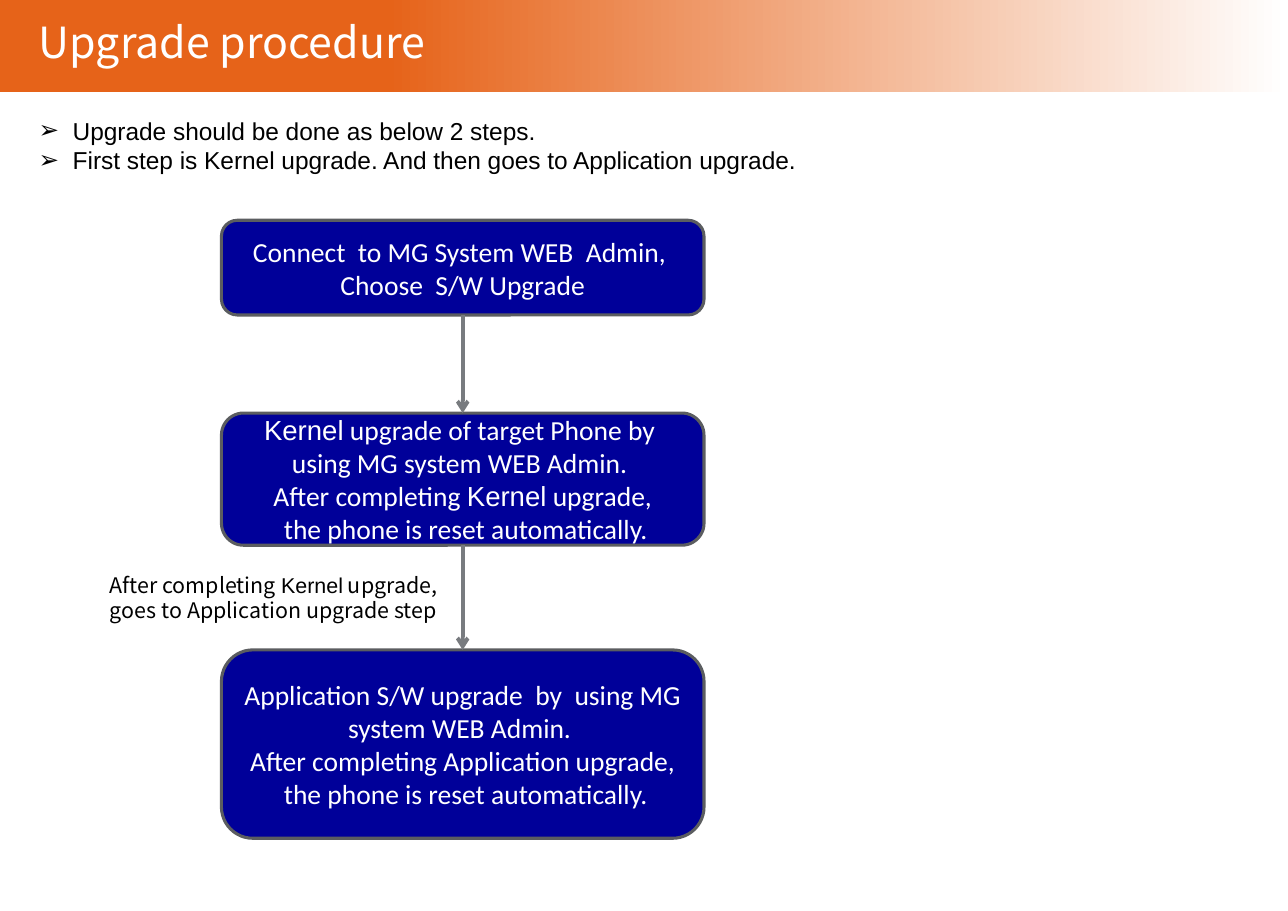
from dataclasses import dataclass

from lxml.etree import SubElement
from pptx import Presentation
from pptx.dml.color import RGBColor
from pptx.enum.shapes import MSO_CONNECTOR, MSO_SHAPE
from pptx.enum.text import MSO_ANCHOR, MSO_AUTO_SIZE, PP_ALIGN
from pptx.oxml.ns import qn
from pptx.util import Inches, Pt


@dataclass(frozen=True)
class Theme:
    banner: str = "E66319"
    light: str = "FFFFFF"
    dark: str = "000000"
    step: str = "000099"
    border: str = "5B5D60"
    arrow: str = "787B7F"
    heading_font: str = "Noto Sans CJK KR"
    step_font: str = "Calibri"
    body_font: str = "Arial"
    title_size: int = 28
    step_size: int = 18
    body_size: int = 16
    label_size: int = 14


class UpgradeSlide:
    """Holds the theme and the current page, and adds its elements."""

    def __init__(self, deck, theme):
        self.theme = theme
        self.width = deck.slide_width
        self.page = deck.slides.add_slide(deck.slide_layouts[1])
        self.shapes = self.page.shapes

    def place(self, box, left, top, width, height):
        box.left, box.top = Inches(left), Inches(top)
        box.width, box.height = Inches(width), Inches(height)

    def add_spans(self, para, text, font, size, color):
        """Add text run by run, with the word Kernel in the body font."""
        before, keyword, after = text.partition("Kernel")
        faces = (font, self.theme.body_font, font)
        for words, face in zip((before, keyword, after), faces):
            if words:
                span = para.add_run()
                span.text = words
                span.font.name = face
                span.font.size = Pt(size)
                span.font.color.rgb = RGBColor.from_string(color)

    def paragraphs(self, frame, lines):
        for number, line in enumerate(lines):
            yield (frame.add_paragraph() if number else frame.paragraphs[0]), line

    def banner(self, height):
        bar = self.shapes.add_shape(MSO_SHAPE.RECTANGLE, 0, 0, self.width, Inches(height))
        bar.shadow.inherit = False
        bar.line.fill.background()
        bar.fill.gradient()
        bar.fill.gradient_angle = 0
        stops = ((0.3, self.theme.banner), (1, self.theme.light))
        for stop, (position, color) in zip(bar.fill.gradient_stops, stops):
            stop.position = position
            stop.color.rgb = RGBColor.from_string(color)
        self.shapes._spTree.insert(2, bar._element)

    def title(self, text, *area):
        box = self.shapes.title
        self.place(box, *area)
        frame = box.text_frame
        frame.margin_left = frame.margin_right = frame.margin_top = frame.margin_bottom = 0
        frame.word_wrap = False
        frame.auto_size = MSO_AUTO_SIZE.NONE
        frame.vertical_anchor = MSO_ANCHOR.MIDDLE
        para = frame.paragraphs[0]
        para.alignment = PP_ALIGN.LEFT
        self.add_spans(para, text, self.theme.heading_font, self.theme.title_size, self.theme.light)

    def bullets(self, lines, *area):
        box = self.page.placeholders[1]
        self.place(box, *area)
        frame = box.text_frame
        frame.auto_size = MSO_AUTO_SIZE.NONE
        indent = Inches(0.31)
        for para, line in self.paragraphs(frame, lines):
            para.space_before = Pt(0)
            properties = para._p.get_or_add_pPr()
            properties.set("marL", str(indent))
            properties.set("indent", str(-indent))
            SubElement(properties, qn("a:buChar"), char="➢")
            self.add_spans(para, line, self.theme.body_font, self.theme.body_size, self.theme.dark)

    def step(self, lines, *area):
        box = self.shapes.add_shape(MSO_SHAPE.ROUNDED_RECTANGLE, *map(Inches, area))
        box.shadow.inherit = False
        box.fill.solid()
        box.fill.fore_color.rgb = RGBColor.from_string(self.theme.step)
        box.line.color.rgb = RGBColor.from_string(self.theme.border)
        box.line.width = Pt(2)
        frame = box.text_frame
        frame.word_wrap = True
        frame.vertical_anchor = MSO_ANCHOR.MIDDLE
        for para, line in self.paragraphs(frame, lines):
            para.alignment = PP_ALIGN.CENTER
            self.add_spans(para, line, self.theme.step_font, self.theme.step_size, self.theme.light)
        return box

    def arrow(self, upper, lower):
        link = self.shapes.add_connector(MSO_CONNECTOR.STRAIGHT, 0, 0, 0, 0)
        link.begin_connect(upper, 2)
        link.end_connect(lower, 0)
        link.line.color.rgb = RGBColor.from_string(self.theme.arrow)
        link.line.width = Pt(2.5)
        SubElement(link.line._get_or_add_ln(), qn("a:tailEnd"), type="arrow")
        SubElement(link._element.spPr, qn("a:effectLst"))

    def label(self, lines, *area):
        frame = self.shapes.add_textbox(*map(Inches, area)).text_frame
        frame.word_wrap = False
        for para, line in self.paragraphs(frame, lines):
            self.add_spans(para, line, self.theme.heading_font, self.theme.label_size, self.theme.dark)


def main():
    deck = Presentation()
    deck.slide_width, deck.slide_height = Inches(11.69), Inches(8.27)
    slide = UpgradeSlide(deck, Theme())
    slide.banner(0.84)
    slide.title("Upgrade procedure", 0.35, 0.17, 8.88, 0.41)
    slide.bullets(
        [
            "Upgrade should be done as below 2 steps.",
            "First step is Kernel upgrade. And then goes to Application upgrade.",
        ],
        0.25, 1, 9.06, 0.64,
    )

    reset = " the phone is reset automatically."
    steps = [
        (2, 0.86, ["Connect  to MG System WEB  Admin, ", "Choose  S/W Upgrade"]),
        (3.75, 1.2, [
            "Kernel upgrade of target Phone by  using MG system WEB Admin. ",
            "After completing Kernel upgrade,",
            reset,
        ]),
        (5.9, 1.71, [
            "Application S/W upgrade  by  using MG system WEB Admin. ",
            "After completing Application upgrade,",
            reset,
        ]),
    ]
    boxes = [slide.step(lines, 2.01, top, 4.38, height) for top, height, lines in steps]
    for upper, lower in zip(boxes, boxes[1:]):
        slide.arrow(upper, lower)

    slide.label(
        ["After completing Kernel upgrade,", "goes to Application upgrade step"],
        0.9, 5.14, 3.26, 0.57,
    )
    deck.save("out.pptx")


if __name__ == "__main__":
    main()
